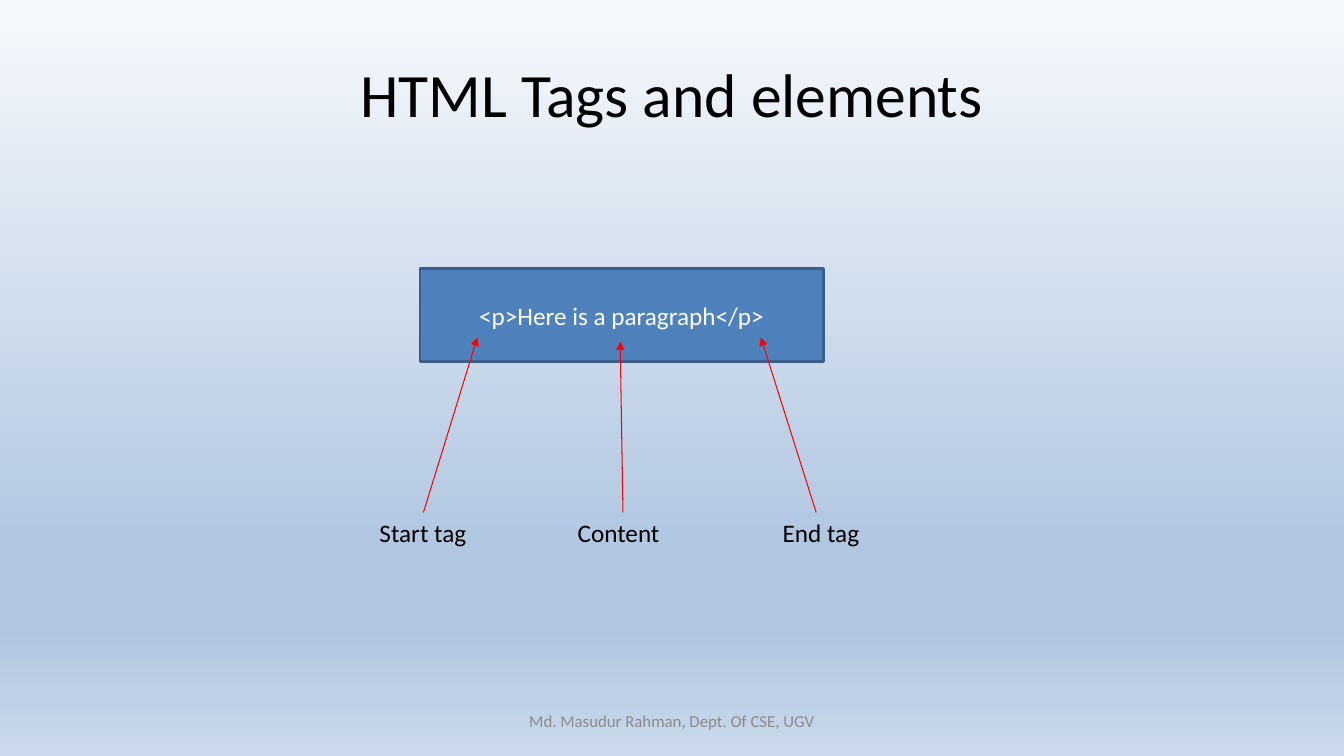
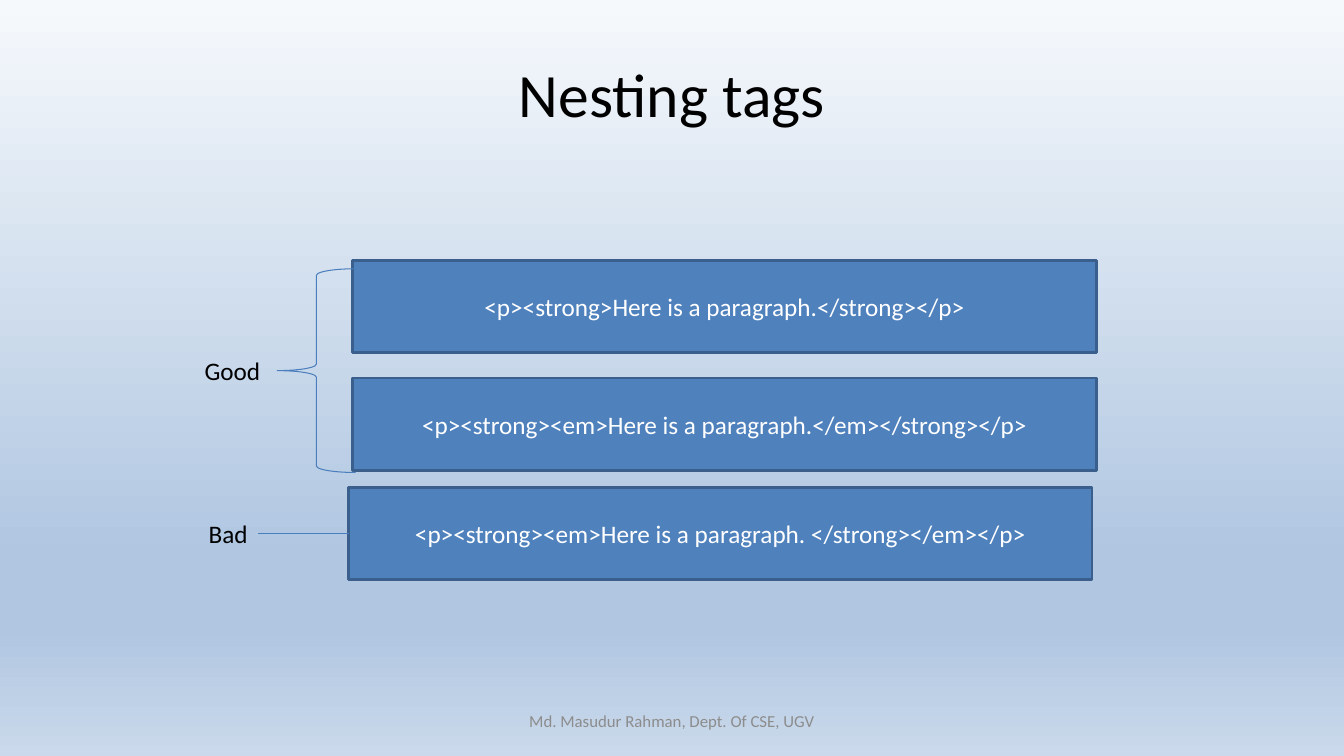
import pptx
import pptx.dml.color
import pptx.enum.shapes
import pptx.enum.text
import pptx.oxml
import pptx.oxml.ns
import pptx.util
from lxml import etree

Pt = pptx.util.Pt
qn = pptx.oxml.ns.qn
Shape = pptx.enum.shapes.MSO_SHAPE
Align = pptx.enum.text.PP_ALIGN
Anchor = pptx.enum.text.MSO_ANCHOR

COLORS = {
    "text": "000000",
    "footer": "8C8C8C",
    "box": "4F81BD",
    "box_text": "FFFFFF",
    "border": "3A5F8C",
    "link": "4B7EBC",
    "arrow": "FF0000",
}
BACKGROUND_STOPS = [(0, "F6F9FC"), (74, "B0C6E1"), (83, "B0C6E1"), (100, "CAD9EB")]
FONT = "Calibri"
FOOTER = "Md. Masudur Rahman, Dept. Of CSE, UGV"
TOP, LEFT = 0, 1
RIGHT = 3


def rgb(name):
    return pptx.dml.color.RGBColor.from_string(COLORS[name])


class Deck:
    def __init__(self):
        self.presentation = pptx.Presentation()
        self.presentation.slide_width = Pt(960)
        self.presentation.slide_height = Pt(540)
        self.slide = None
        self.set_background()

    def set_background(self):
        """Put the vertical gradient on the master, so every slide has it."""
        master = self.presentation.slide_master
        fill = master.background.fill
        fill.gradient()
        fill.gradient_angle = 270
        stops = next(master.element.iter(qn("a:gsLst")))
        for stop in list(stops):
            stops.remove(stop)
        for percent, color in BACKGROUND_STOPS:
            stop = etree.SubElement(stops, qn("a:gs"), pos=str(percent * 1000))
            etree.SubElement(stop, qn("a:srgbClr"), val=color)

    def new_slide(self, title):
        self.slide = self.presentation.slides.add_slide(self.presentation.slide_layouts[6])
        self.centered_text(title, 48, 21.6, 864, 90, 44, "text")
        self.centered_text(FOOTER, 328, 500.5, 304, 28.75, 12, "footer")

    def set_text(self, shape, text, size, color, align, anchor, wrap):
        frame = shape.text_frame
        frame.text = text
        frame.word_wrap = wrap
        frame.vertical_anchor = anchor
        paragraph = frame.paragraphs[0]
        paragraph.alignment = align
        font = paragraph.runs[0].font
        font.name = FONT
        font.size = Pt(size)
        font.color.rgb = rgb(color)

    def text_box(self, left, top, width, height):
        return self.slide.shapes.add_textbox(Pt(left), Pt(top), Pt(width), Pt(height))

    def centered_text(self, text, left, top, width, height, size, color):
        shape = self.text_box(left, top, width, height)
        self.set_text(shape, text, size, color, Align.CENTER, Anchor.MIDDLE, True)

    def label(self, text, left, top, width):
        shape = self.text_box(left, top, width, 29)
        self.set_text(shape, text, 18, "text", Align.LEFT, Anchor.TOP, False)
        shape.text_frame.auto_size = pptx.enum.text.MSO_AUTO_SIZE.SHAPE_TO_FIT_TEXT
        return shape

    def shape(self, preset, left, top, width, height, line_color, line_width):
        shape = self.slide.shapes.add_shape(preset, Pt(left), Pt(top), Pt(width), Pt(height))
        shape.shadow.inherit = False
        shape.fill.background()
        shape.line.color.rgb = rgb(line_color)
        shape.line.width = Pt(line_width)
        return shape

    def code_box(self, code, left, top, width):
        shape = self.shape(Shape.RECTANGLE, left, top, width, 66, "border", 2)
        shape.fill.solid()
        shape.fill.fore_color.rgb = rgb("box")
        self.set_text(shape, code, 18, "box_text", Align.CENTER, Anchor.MIDDLE, True)
        return shape

    def brace(self, left, top, width, height):
        self.shape(Shape.LEFT_BRACE, left, top, width, height, "link", 0.75)

    def line(self, start, end, color):
        connector = self.slide.shapes.add_connector(
            pptx.enum.shapes.MSO_CONNECTOR.STRAIGHT, *map(Pt, start + end))
        connector.line.color.rgb = rgb(color)
        connector.line.width = Pt(0.75)
        etree.SubElement(connector.element.spPr, qn("a:effectLst"))
        return connector

    def arrow(self, start, end):
        connector = self.line(start, end, "arrow")
        outline = connector.element.spPr.find(qn("a:ln"))
        etree.SubElement(outline, qn("a:tailEnd"), type="triangle")
        return connector


def tags_slide(deck):
    deck.new_slide("HTML Tags and elements")
    deck.code_box("<p>Here is a paragraph</p>", 300, 192, 288)
    label_top = 366
    start_label = deck.label("Start tag", 264, label_top, 77)
    deck.label("End tag", 552, label_top, 70)
    deck.label("Content", 405.5, label_top, 73.5)
    start_arrow = deck.arrow((302.5, label_top), (341, 241))
    start_arrow.begin_connect(start_label, TOP)
    deck.arrow((445, label_top), (443, 244))
    deck.arrow((583, label_top), (543.5, 241))


def nesting_slide(deck):
    deck.new_slide("Nesting tags")
    width = 531
    deck.code_box("<p><strong>Here is a paragraph.</strong></p>", 252, 186, width)
    deck.code_box("<p><strong><em>Here is a paragraph.</em></strong></p>", 252, 270, width)
    bad_box = deck.code_box(
        "<p><strong><em>Here is a paragraph. </strong></em></p>", 249, 348, width)
    deck.brace(198, 192, 56, 145.5)
    deck.label("Good", 139, 250, 54.5)
    bad_label = deck.label("Bad", 142, 366.5, 42.5)
    bad_line = deck.line((184.5, 381), (249, 381), "link")
    bad_line.begin_connect(bad_label, RIGHT)
    bad_line.end_connect(bad_box, LEFT)


def main():
    deck = Deck()
    tags_slide(deck)
    nesting_slide(deck)
    deck.presentation.save("out.pptx")


if __name__ == "__main__":
    main()
